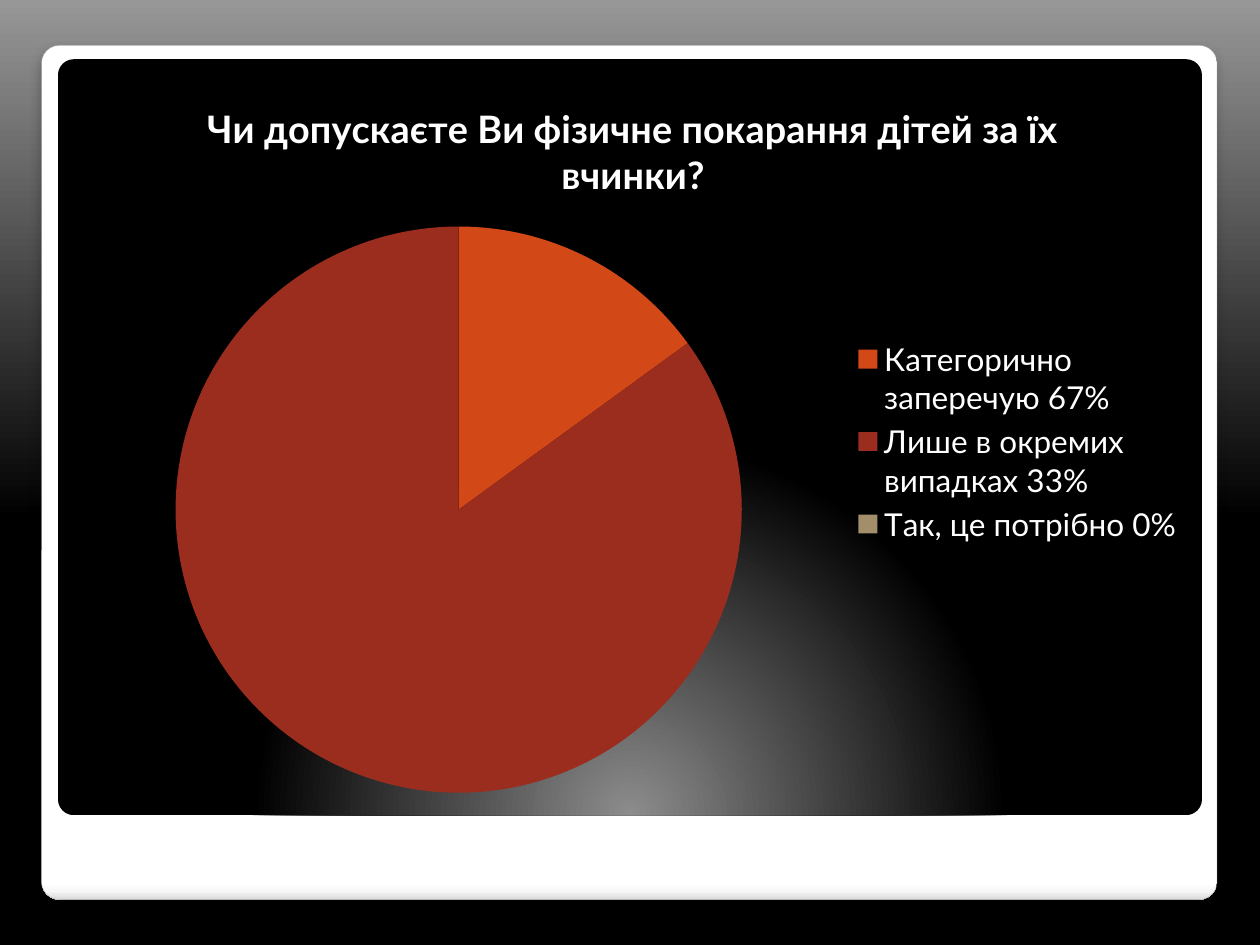
from dataclasses import dataclass

from lxml.etree import SubElement
from pptx import Presentation
from pptx.chart.data import CategoryChartData
from pptx.dml.color import RGBColor
from pptx.enum.chart import XL_CHART_TYPE, XL_LEGEND_POSITION
from pptx.enum.shapes import MSO_SHAPE
from pptx.oxml import parse_xml
from pptx.oxml.ns import nsdecls, qn
from pptx.util import Inches, Pt


@dataclass(frozen=True)
class Theme:
    font: str = "Lato"
    text: str = "FFFFFF"
    card_line: str = "A4A4A4"
    slices: tuple = ("D34817", "9B2D1F", "A28E6A")
    backdrop: tuple = ((0, "000000"), (45, "000000"), (100, "979797"))
    card: tuple = ((0, "FFFFFF"), (98, "FFFFFF"), (99, "F7F7F7"), (100, "DADADA"))
    panel: tuple = ((0, "8C8C8C"), (55, "000000"), (100, "000000"))
    title_size: float = 21.6
    legend_size: float = 18


THEME = Theme()
QUESTION = "Чи допускаєте Ви фізичне покарання дітей за їх вчинки?"
ANSWERS = {
    "Категорично заперечую 67%": 15,
    "Лише в окремих випадках 33%": 85,
    "Так, це потрібно 0%": 0,
}


def linear(angle):
    return f'<a:lin ang="{angle * 60000}" scaled="0"/>'


def set_gradient(fill, parent, stops, direction):
    """Give the fill of parent these stops and this direction."""
    fill.gradient()
    old = parent.find(qn("a:gradFill"))
    gs = "".join(f'<a:gs pos="{pos * 1000}"><a:srgbClr val="{color}"/></a:gs>'
                 for pos, color in stops)
    parent.replace(old, parse_xml(
        f'<a:gradFill {nsdecls("a")} rotWithShape="1">'
        f"<a:gsLst>{gs}</a:gsLst>{direction}</a:gradFill>"))


def style_font(font, size, bold=False):
    font.name = THEME.font
    font.size = Pt(size)
    font.bold = bold
    font.color.rgb = RGBColor.from_string(THEME.text)


def add_backdrop(s):
    fill = s.background.fill
    fill.solid()
    bg_pr = s.element.find(".//" + qn("p:bgPr"))
    set_gradient(fill, bg_pr, THEME.backdrop, linear(270))


def add_rounded(s, box, stops, direction):
    sp = s.shapes.add_shape(MSO_SHAPE.ROUNDED_RECTANGLE, *map(Inches, box))
    sp.adjustments[0] = 0.021
    sp.shadow.inherit = False
    sp.line.fill.background()
    set_gradient(sp.fill, sp.element.spPr, stops, direction)
    return sp


def add_card(s, box):
    card = add_rounded(s, box, THEME.card, linear(90))
    card.line.color.rgb = RGBColor.from_string(THEME.card_line)
    card.line.width = Pt(0.16)
    # Soft shadow below the card
    effects = card.element.spPr.find(qn("a:effectLst"))
    shadow = SubElement(effects, qn("a:outerShdw"), blurRad=str(Pt(6)),
                        dist=str(Pt(4)), dir="5400000", algn="t", rotWithShape="0")
    color = SubElement(shadow, qn("a:srgbClr"), val="000000")
    SubElement(color, qn("a:alpha"), val="25000")


def add_panel(s, box):
    glow = ('<a:path path="circle"><a:fillToRect l="50000" t="175000" '
            'r="50000" b="-75000"/></a:path>')
    add_rounded(s, box, THEME.panel, glow)


def add_answers_chart(s, box):
    data = CategoryChartData()
    data.categories = list(ANSWERS)
    data.add_series(QUESTION, list(ANSWERS.values()))
    chart = s.shapes.add_chart(XL_CHART_TYPE.PIE, *map(Inches, box), data).chart
    style_font(chart.font, THEME.legend_size)

    # Title
    chart.has_title = True
    r = chart.chart_title.text_frame.paragraphs[0].add_run()
    r.text = QUESTION
    style_font(r.font, THEME.title_size, bold=True)
    chart.chart_title.include_in_layout = False

    # Legend
    chart.has_legend = True
    chart.legend.position = XL_LEGEND_POSITION.RIGHT
    chart.legend.include_in_layout = False
    style_font(chart.legend.font, THEME.legend_size)

    # Slices
    plot = chart.plots[0]
    plot.vary_by_categories = True
    for i, color in enumerate(THEME.slices):
        fill = plot.series[0].points[i].format.fill
        fill.solid()
        fill.fore_color.rgb = RGBColor.from_string(color)


def main():
    prs = Presentation()
    prs.slide_width, prs.slide_height = Inches(10), Inches(7.5)
    s = prs.slides.add_slide(prs.slide_layouts[6])
    add_backdrop(s)
    add_card(s, (0.33, 0.36, 9.33, 6.78))
    add_panel(s, (0.46, 0.47, 9.08, 6))
    add_answers_chart(s, (0.55, 0.58, 8.95, 5.85))
    prs.save("out.pptx")


if __name__ == "__main__":
    main()
